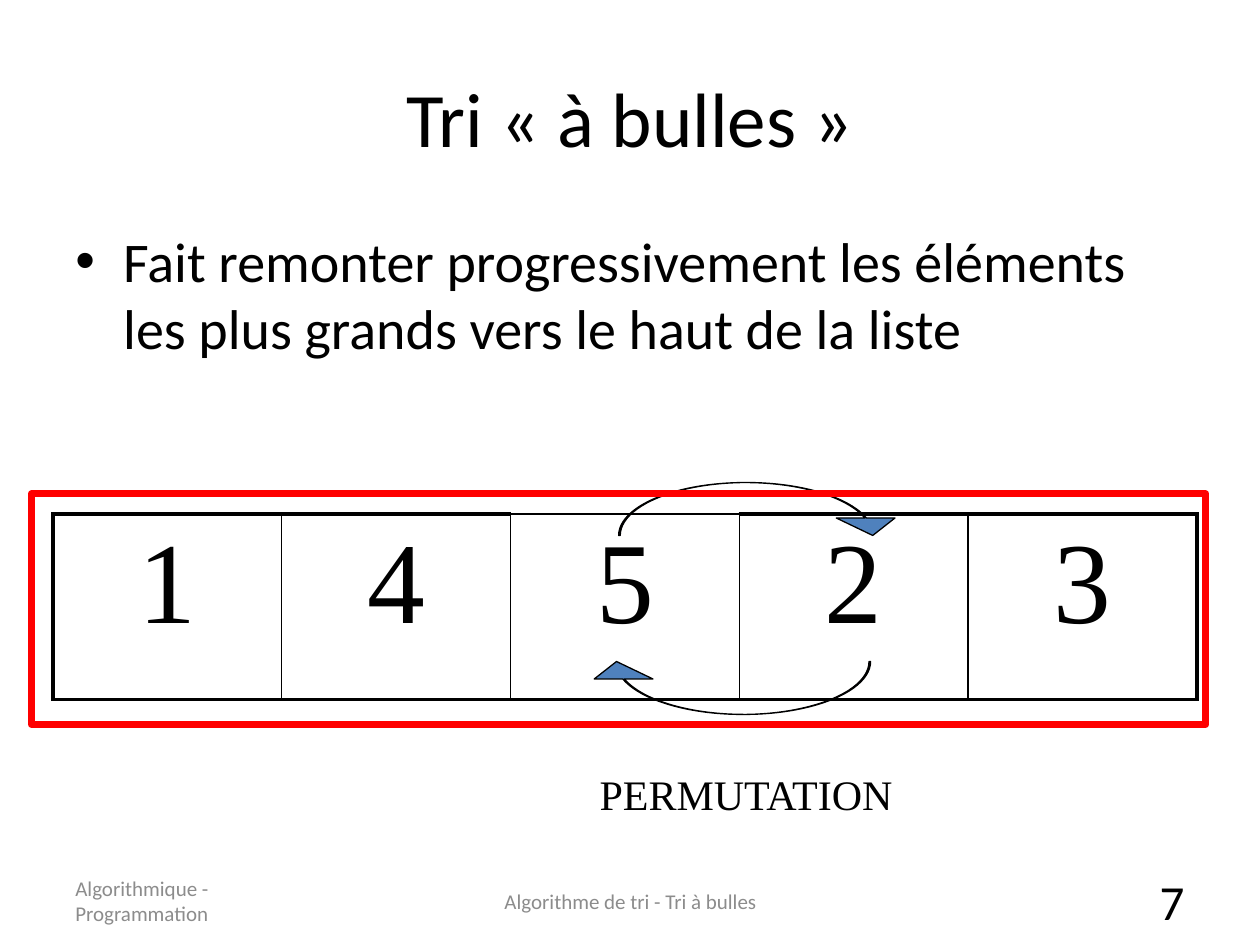
from pptx import Presentation
from pptx.dml.color import RGBColor
from pptx.enum.shapes import MSO_SHAPE as Preset
from pptx.enum.text import MSO_ANCHOR as Anchor, MSO_AUTO_SIZE as AutoSize, PP_ALIGN as Align
from pptx.oxml.ns import qn
from pptx.util import Inches, Pt
from lxml.etree import SubElement

COLORS = {"black": "000000", "grey": "8C8C8C", "blue": "4F81BD", "red": "FF0000"}
SANS, SERIF = "Calibri", "Times New Roman"
VALUES = ["1", "4", "5", "2", "3"]
THIN, THICK = 1, 2.25


def rgb(name):
    return RGBColor.from_string(COLORS[name])


class SlideBuilder:
    def __init__(self, slide):
        self.slide = slide

    def add_words(self, paragraph, text, size, font=SANS, color="black", align=Align.LEFT):
        paragraph.alignment = align
        run = paragraph.add_run()
        run.text = text
        run.font.color.rgb = rgb(color)
        for name, value in {"name": font, "size": Pt(size)}.items():
            setattr(run.font, name, value)

    def text(self, box, text, size, anchor=Anchor.TOP, wrap=True, **style):
        shape = self.slide.shapes.add_textbox(*map(Inches, box))
        frame = shape.text_frame
        settings = {
            "word_wrap": wrap,
            "vertical_anchor": anchor,
            "auto_size": AutoSize.NONE if wrap else AutoSize.SHAPE_TO_FIT_TEXT,
        }
        for name, value in settings.items():
            setattr(frame, name, value)
        self.add_words(frame.paragraphs[0], text, size, **style)
        return frame.paragraphs[0]

    def bullet(self, box, text, size, indent):
        properties = self.text(box, text, size)._p.get_or_add_pPr()
        properties.set("marL", str(Inches(indent)))
        properties.set("indent", str(-Inches(indent)))
        SubElement(properties, qn("a:buFont"), typeface="Arial")
        SubElement(properties, qn("a:buChar"), char="•")

    def shape(self, preset, box, line, width, fill=None):
        shape = self.slide.shapes.add_shape(preset, *map(Inches, box))
        shape.shadow.inherit = False
        shape.line.color.rgb = rgb(line)
        shape.line.width = Pt(width)
        if fill:
            shape.fill.solid()
            shape.fill.fore_color.rgb = rgb(fill)
        else:
            shape.fill.background()
        return shape

    def swap_arrow(self, left, top, flip):
        box = (left, top, 2.25, 0.42)
        arrow = self.shape(Preset.CURVED_UP_ARROW, box, "black", 0.75, "blue")
        for index, value in enumerate((0.03, 1.11, 0.33)):
            arrow.adjustments[index] = value
        arrow._element.spPr.find(qn("a:xfrm")).set(flip, "1")

    def borders(self, cell, widths):
        """Draw the left, right, top and bottom edges, in that order."""
        properties = cell._tc.get_or_add_tcPr()
        for side, width in zip("LRTB", widths):
            line = SubElement(properties, qn(f"a:ln{side}"), w=str(Pt(width)))
            fill = SubElement(line, qn("a:solidFill"))
            SubElement(fill, qn("a:srgbClr"), val=COLORS["black"])

    def value_row(self, box, values, open_index):
        """Draw the list as one row; the cell at open_index has a thin top edge."""
        table = self.slide.shapes.add_table(1, len(values), *map(Inches, box)).table
        for name in ("first_row", "horz_banding"):
            setattr(table, name, False)
        for index, value in enumerate(values):
            cell = table.cell(0, index)
            self.add_words(cell.text_frame.paragraphs[0], value, 66, SERIF, align=Align.CENTER)
            left = THICK if index == 0 else THIN
            right = THICK if index == len(values) - 1 else THIN
            top = THIN if index == open_index else THICK
            self.borders(cell, (left, right, top, THICK))
            cell.fill.background()


def main():
    presentation = Presentation()
    presentation.slide_width, presentation.slide_height = Inches(10), Inches(7.5)
    builder = SlideBuilder(presentation.slides.add_slide(presentation.slide_layouts[6]))

    builder.text((0.5, 0.3, 9, 1.25), "Tri « à bulles »", 44,
                 Anchor.MIDDLE, align=Align.CENTER)
    builder.bullet((0.5, 1.75, 9, 4.95), "Fait remonter progressivement les éléments "
                   "les plus grands vers le haut de la liste", 32, 0.38)

    builder.value_row((0.42, 4.08, 9.08, 1.47), VALUES, open_index=2)
    builder.swap_arrow(4.91, 3.83, "flipV")
    builder.swap_arrow(4.66, 5.25, "flipH")
    builder.text((4.66, 6.05, 2.59, 0.5), "PERMUTATION", 24, wrap=False, font=SERIF)

    footers = [
        (0.5, 2.33, "Algorithmique - Programmation", 12, "grey", Align.LEFT),
        (3.42, 3.17, "Algorithme de tri - Tri à bulles", 12, "grey", Align.CENTER),
        (7.17, 2.33, "7", 28, "black", Align.RIGHT),
    ]
    for left, width, text, size, color, align in footers:
        builder.text((left, 6.95, width, 0.4), text, size, Anchor.MIDDLE,
                     color=color, align=align)
    builder.shape(Preset.RECTANGLE, (0.25, 3.92, 9.32, 1.83), "red", 4)

    presentation.save("out.pptx")


if __name__ == "__main__":
    main()
